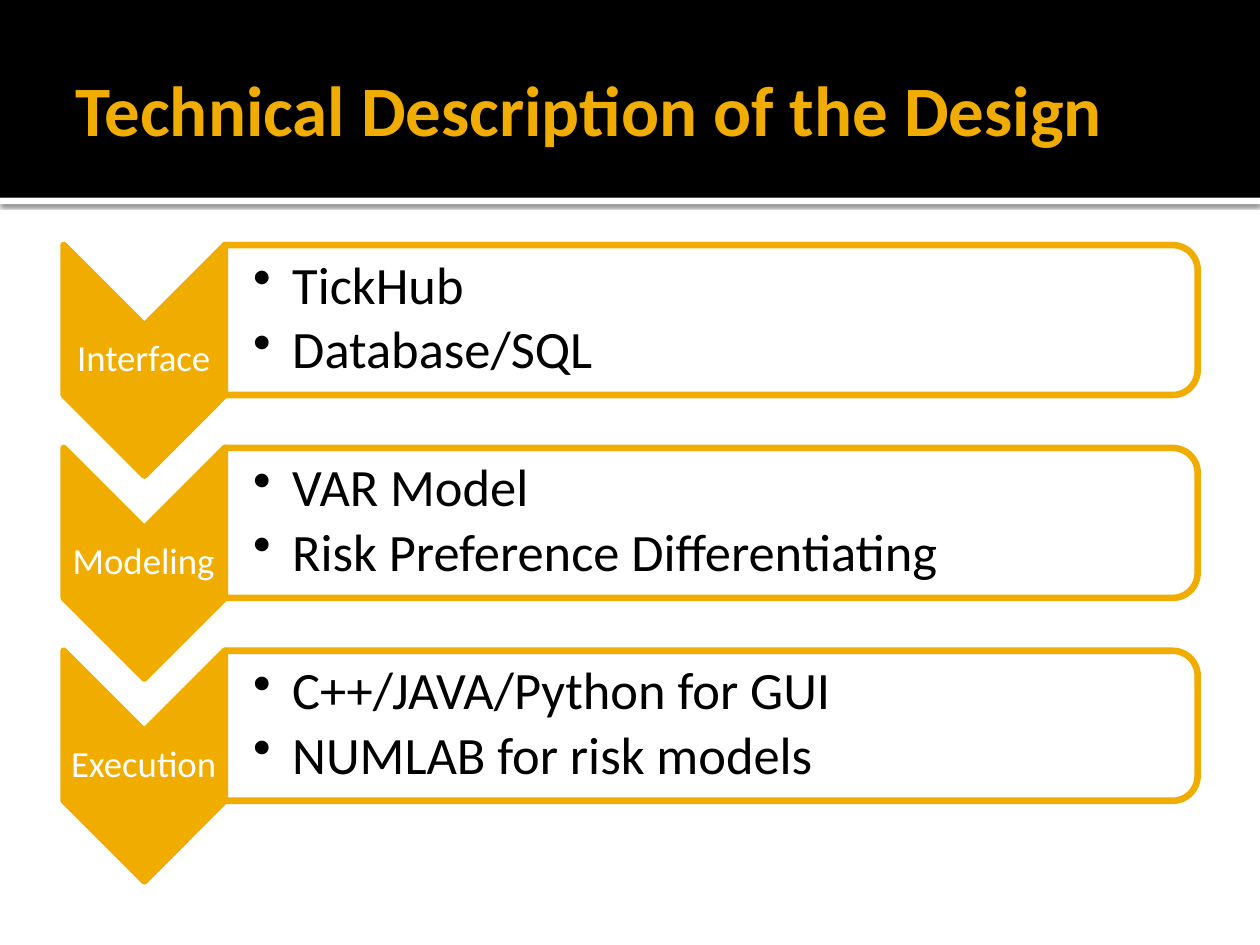
from lxml import etree
from pptx import Presentation
from pptx.dml.color import RGBColor
from pptx.enum.shapes import MSO_SHAPE
from pptx.enum.text import MSO_ANCHOR, MSO_AUTO_SIZE, PP_ALIGN
from pptx.oxml import parse_xml
from pptx.oxml.ns import qn
from pptx.util import Inches, Pt

RECT = MSO_SHAPE.RECTANGLE
CHEVRON = MSO_SHAPE.CHEVRON
ROUND = MSO_SHAPE.ROUND_2_SAME_RECTANGLE
MIDDLE = MSO_ANCHOR.MIDDLE
LEFT, CENTER = PP_ALIGN.LEFT, PP_ALIGN.CENTER
NO_FIT = MSO_AUTO_SIZE.NONE
GOLD, BLACK, WHITE = "F0AD00", "000000", "FFFFFF"
STEP = 1.61
STAGES = [
    ("Interface", ["TickHub", "Database/SQL"]),
    ("Modeling", ["VAR Model", "Risk Preference Differentiating"]),
    ("Execution", ["C++/JAVA/Python for GUI", "NUMLAB for risk models"]),
]
SHADOW = """<a:effectLst xmlns:a="http://schemas.openxmlformats.org/drawingml/2006/main">
<a:outerShdw blurRad="31750" dist="10160" dir="5400000" algn="tl" rotWithShape="0">
<a:srgbClr val="000000"><a:alpha val="60000"/></a:srgbClr></a:outerShdw></a:effectLst>"""


def add_form(kind, box, fill, line=None, turn=0):
    form = slide.shapes.add_shape(kind, *map(Inches, box))
    form.shadow.inherit = False
    form.rotation = turn
    form.fill.solid()
    form.fill.fore_color.rgb = RGBColor.from_string(fill)
    if line:
        form.line.color.rgb = RGBColor.from_string(line)
        form.line.width = Pt(3.78)
    else:
        form.line.fill.background()
    return form


def set_text(shape, lines, size, color, pads, bold=False, align=LEFT,
             space=1.0, after=0, bullet=False):
    """Fill the shape with one paragraph per line; pads are left, top, right, bottom."""
    frame = shape.text_frame
    frame.word_wrap = True
    frame.auto_size = NO_FIT
    frame.vertical_anchor = MIDDLE
    (frame.margin_left, frame.margin_top,
     frame.margin_right, frame.margin_bottom) = map(Inches, pads)
    frame.text = "\n".join(lines)
    for para in frame.paragraphs:
        para.alignment = align
        para.line_spacing = space
        para.space_after = Pt(after)
        font = para.runs[0].font
        font.name, font.size, font.bold = "Calibri", Pt(size), bold
        font.color.rgb = RGBColor.from_string(color)
        if bullet:
            props = para._p.get_or_add_pPr()
            props.set("marL", str(Inches(0.31)))
            props.set("indent", str(-Inches(0.31)))
            etree.SubElement(props, qn("a:buChar"), char="•")


prs = Presentation()
prs.slide_width, prs.slide_height = Inches(10), Inches(7.5)
slide = prs.slides.add_slide(prs.slide_layouts[5])

# Header band with a shaded white rule below it
rule = add_form(RECT, (0, 1.57, 10, 0.05), WHITE)
props = rule._element.spPr
props.replace(props.find(qn("a:effectLst")), parse_xml(SHADOW))
add_form(RECT, (0, 0, 10, 1.57), BLACK)

title = slide.shapes.title
title.left, title.top = Inches(0.5), Inches(0.17)
title.width, title.height = Inches(9), Inches(1.37)
set_text(title, ["Technical Description of the Design"], 40.5, GOLD,
         (0.1, 0.05, 0.05, 0.05), bold=True)
slide.shapes._spTree.append(title._element)  # in front of the band

# One row per stage: chevron with its name, panel with its list
for row, (name, items) in enumerate(STAGES):
    drop = row * STEP
    add_form(CHEVRON, (0.23, 2.22 + drop, 1.83, 1.28), GOLD, GOLD, 90)
    label = slide.shapes.add_textbox(
        *map(Inches, (0.5, 2.58 + drop, 1.28, 0.55)))
    set_text(label, [name], 21, WHITE, [0.01] * 4, align=CENTER,
             space=0.9, after=7.35)

    panel = add_form(ROUND, (5.05, -1.32 + drop, 1.19, 7.72), WHITE, GOLD, 90)
    tint = panel._element.spPr.find(qn("a:solidFill"))[0]
    etree.SubElement(tint, qn("a:alpha"), val="90000")
    notes = slide.shapes.add_textbox(
        *map(Inches, (1.78, 2 + drop, 7.66, 1.07)))
    set_text(notes, items, 30, BLACK, (0.23, 0.02, 0.02, 0.02),
             space=0.9, after=4.5, bullet=True)

prs.save("out.pptx")
